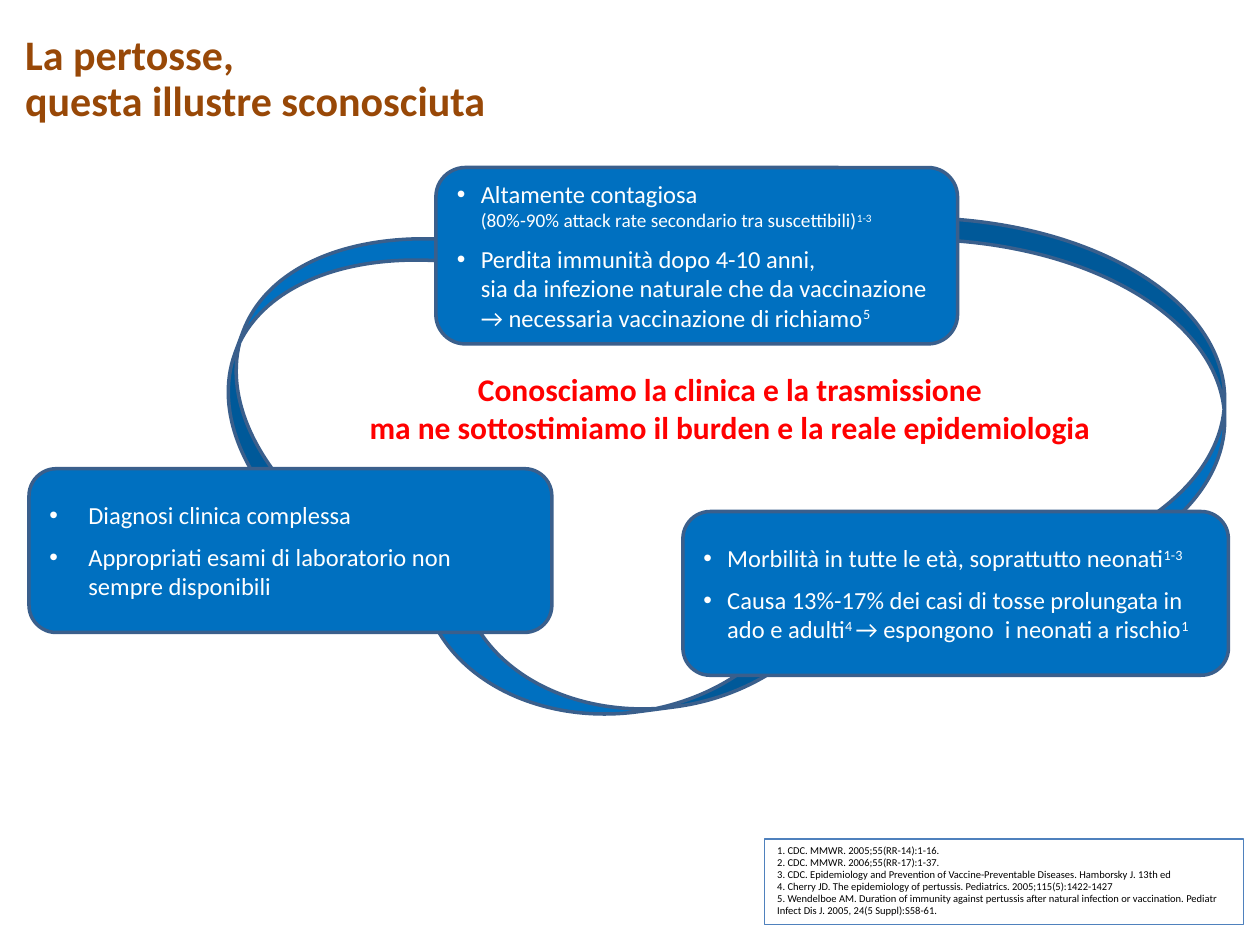
"""Build the slide on pertussis: three linked boxes, a key message and references."""
import copy
from dataclasses import dataclass

import lxml.etree
import pptx
import pptx.dml.color
import pptx.enum.shapes
import pptx.enum.text
import pptx.oxml.ns
import pptx.util

Inches = pptx.util.Inches
Pt = pptx.util.Pt
ALIGN = pptx.enum.text.PP_ALIGN
ANCHOR = pptx.enum.text.MSO_ANCHOR
SHAPE = pptx.enum.shapes.MSO_SHAPE
FONT = "Calibri"
COLORS = {
    "blue": "0070C0",
    "outline": "3A5F8C",
    "frame": "4F81BD",
    "title": "984807",
    "message": "FF0000",
    "white": "FFFFFF",
    "black": "000000",
}


@dataclass
class Frame:
    """Position and size in inches."""
    left: float
    top: float
    width: float
    height: float

    def lengths(self) -> list:
        """Return the four values as lengths."""
        return [Inches(v) for v in (self.left, self.top, self.width, self.height)]


@dataclass
class Run:
    """Piece of text with its look."""
    text: str
    size: float = 14
    color: str = "white"
    bold: bool = False
    superscript: bool = False


@dataclass
class Arrow:
    """Curved arrow of the ring."""
    frame: Frame
    adjustments: tuple
    rotation: float = 0


@dataclass
class Box:
    """Rounded box holding a bulleted list."""
    frame: Frame
    indent: float
    items: list


ARROWS = [
    Arrow(Frame(7.28, 1.73, 2.44, 3.57), (0.07, 0.5, 0.15)),
    Arrow(Frame(4.44, 3.25, 1.22, 3.57), (0.25, 0.5, 0.15), 82.5),
    Arrow(Frame(1.91, 1.17, 2.25, 3.43), (0.08, 0.5, 0.36), 200.4),
]
BOXES = [
    Box(Frame(5.42, 4.06, 4.33, 1.3), 0.19, [
        [Run("Morbilità in tutte le età, soprattutto neonati"),
         Run("1-3", superscript=True)],
        [Run("Causa 13%-17% dei casi di tosse prolungata in ado e adulti"),
         Run("4 ", superscript=True),
         Run("→ espongono  i neonati a rischio"),
         Run("1", superscript=True)],
    ]),
    Box(Frame(3.46, 1.33, 4.14, 1.4), 0.19, [
        [Run("Altamente contagiosa \n"),
         Run("(80%-90% attack rate secondario tra suscettibili)", 11),
         Run("1-3", 11, superscript=True)],
        [Run("Perdita immunità dopo 4-10 anni, \n"
             "sia da infezione naturale che da vaccinazione\n"
             "→ necessaria vaccinazione di richiamo"),
         Run("5", superscript=True)],
    ]),
    Box(Frame(0.23, 3.72, 4.15, 1.3), 0.31, [
        [Run("Diagnosi clinica complessa")],
        [Run("Appropriati esami di laboratorio non sempre disponibili")],
    ]),
]
REFERENCES = [
    "1. CDC. MMWR. 2005;55(RR-14):1-16.",
    "2. CDC. MMWR. 2006;55(RR-17):1-37.",
    "3. CDC. Epidemiology and Prevention of Vaccine-Preventable Diseases. Hamborsky J. 13th ed",
    "4. Cherry JD. The epidemiology of pertussis. Pediatrics. 2005;115(5):1422-1427",
    "5. Wendelboe AM. Duration of immunity against pertussis after natural infection or "
    "vaccination. Pediatr Infect Dis J. 2005, 24(5 Suppl):S58-61.",
]


def rgb(name: str) -> pptx.dml.color.RGBColor:
    """Look up a colour by name."""
    return pptx.dml.color.RGBColor.from_string(COLORS[name])


def add_run(p, run: Run) -> None:
    """Add a run, turning newlines into line breaks of the same size."""
    for i, text in enumerate(run.text.split("\n")):
        if i:
            p.add_line_break()
            p._p[-1].append(copy.deepcopy(r._r.rPr))
        if text:
            r = p.add_run()
            r.text = text
            r.font.name = FONT
            r.font.size = Pt(run.size)
            r.font.bold = run.bold
            r.font.color.rgb = rgb(run.color)
            if run.superscript:
                r._r.rPr.set("baseline", "30000")


def add_bullet(p, indent: float) -> None:
    """Give a paragraph a hanging round bullet."""
    pPr = p._p.get_or_add_pPr()
    pPr.set("marL", str(Inches(indent)))
    pPr.set("indent", str(-Inches(indent)))
    for tag, key, value in (("a:buFont", "typeface", "Arial"), ("a:buChar", "char", "•")):
        lxml.etree.SubElement(pPr, pptx.oxml.ns.qn(tag)).set(key, value)


def fill_text(tf, paragraphs: list, align=ALIGN.LEFT, spacing: float = 1.0,
              gap: float = 0, indent: float = 0) -> None:
    """Write paragraphs of runs into a text frame."""
    for i, runs in enumerate(paragraphs):
        p = tf.add_paragraph() if i else tf.paragraphs[0]
        p.alignment = align
        p.line_spacing = spacing
        if i and gap:
            p.space_before = Pt(gap)
        if indent:
            add_bullet(p, indent)
        for run in runs:
            add_run(p, run)


def add_outlined(slide, kind, frame: Frame, line: str, width: float, fill: str = ""):
    """Add a preset shape with an outline and an optional fill."""
    sp = slide.shapes.add_shape(kind, *frame.lengths())
    sp.shadow.inherit = False
    if fill:
        sp.fill.solid()
        sp.fill.fore_color.rgb = rgb(fill)
    else:
        sp.fill.background()
    sp.line.color.rgb = rgb(line)
    sp.line.width = Pt(width)
    return sp


def add_title(slide) -> None:
    """Place and write the title."""
    sp = slide.shapes.title
    sp.left, sp.top, sp.width, sp.height = Frame(0.2, 0.27, 5.85, 0.73).lengths()
    tf = sp.text_frame
    tf.word_wrap = True
    tf.vertical_anchor = ANCHOR.MIDDLE
    tf.margin_left = tf.margin_right = tf.margin_top = tf.margin_bottom = 0
    fill_text(tf, [[Run("La pertosse, \nquesta illustre sconosciuta", 24, "title", True)]],
              spacing=0.9)


def add_references(slide) -> None:
    """Add the framed list of references."""
    sp = add_outlined(slide, SHAPE.RECTANGLE, Frame(6.07, 6.66, 3.8, 0.68), "frame", 0.75)
    tf = sp.text_frame
    tf.word_wrap = True
    tf.vertical_anchor = ANCHOR.TOP
    fill_text(tf, [[Run(text, 6, "black")] for text in REFERENCES], spacing=0.95)


def add_message(slide) -> None:
    """Add the central message."""
    sp = slide.shapes.add_textbox(*Frame(2.81, 2.89, 5.97, 0.71).lengths())
    sp.text_frame.word_wrap = False
    lines = ("Conosciamo la clinica e la trasmissione",
             "ma ne sottostimiamo il burden e la reale epidemiologia")
    fill_text(sp.text_frame, [[Run(line, 18, "message", True)] for line in lines], ALIGN.CENTER)


def add_arrow(slide, arrow: Arrow) -> None:
    """Add one curved arrow."""
    sp = add_outlined(slide, SHAPE.CURVED_LEFT_ARROW, arrow.frame, "outline", 2, "blue")
    sp.rotation = arrow.rotation
    for i, value in enumerate(arrow.adjustments):
        sp.adjustments[i] = value


def add_box(slide, box: Box) -> None:
    """Add one rounded box with its list."""
    sp = add_outlined(slide, SHAPE.ROUNDED_RECTANGLE, box.frame, "outline", 2, "blue")
    sp.text_frame.word_wrap = True
    sp.text_frame.vertical_anchor = ANCHOR.MIDDLE
    fill_text(sp.text_frame, box.items, gap=7, indent=box.indent)


def main() -> None:
    """Build and save the slide."""
    prs = pptx.Presentation()
    prs.slide_width, prs.slide_height = Inches(10), Inches(7.5)
    slide = prs.slides.add_slide(prs.slide_layouts[5])
    add_references(slide)
    add_message(slide)
    add_title(slide)
    for arrow in ARROWS:
        add_arrow(slide, arrow)
    for box in BOXES:
        add_box(slide, box)
    prs.save("out.pptx")


if __name__ == "__main__":
    main()
